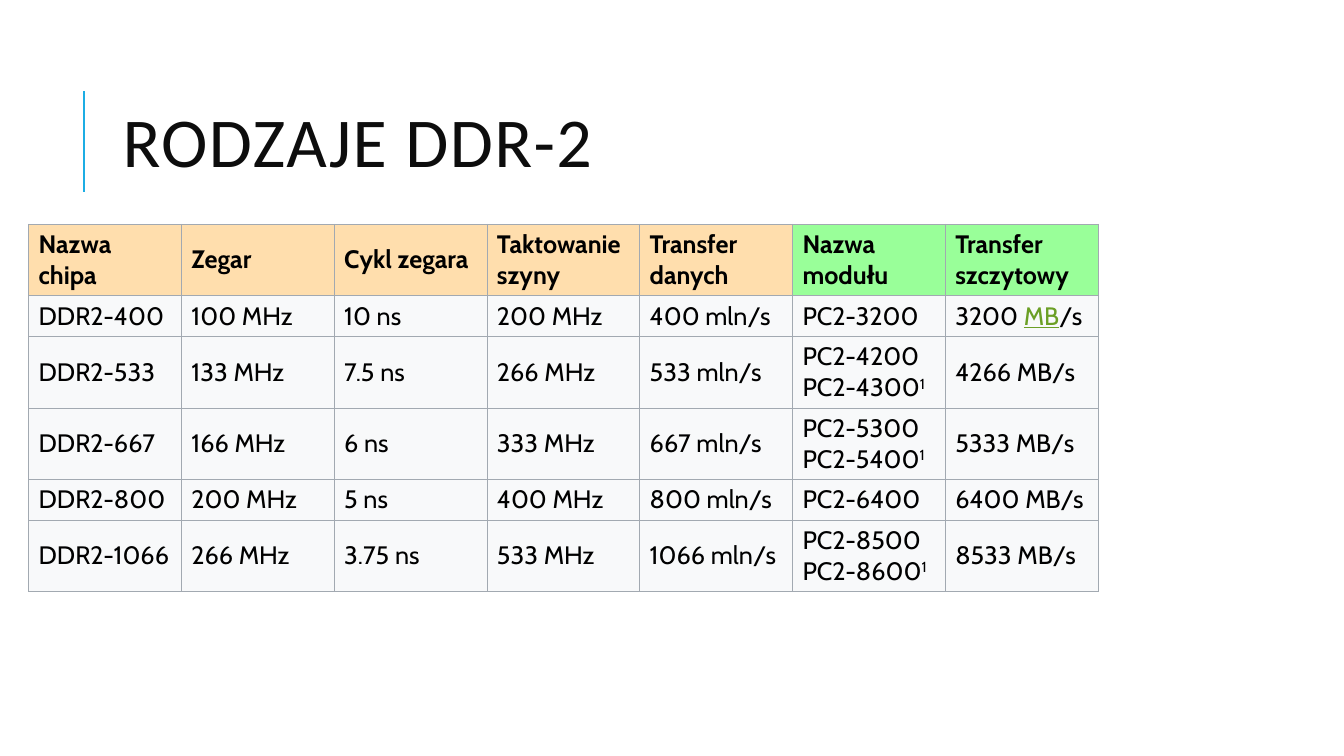
from lxml import etree
from pptx import Presentation
from pptx.dml.color import RGBColor
from pptx.enum.shapes import MSO_CONNECTOR
from pptx.enum.text import MSO_ANCHOR
from pptx.oxml import parse_xml
from pptx.oxml.ns import nsdecls, qn
from pptx.util import Cm, Pt

MIDDLE = MSO_ANCHOR.MIDDLE
STRAIGHT = MSO_CONNECTOR.STRAIGHT

ACCENT = RGBColor(0x1C, 0xAD, 0xE4)
TITLE = RGBColor(0x0D, 0x0D, 0x0D)
BLACK = RGBColor(0x00, 0x00, 0x00)
LINK = RGBColor(0x6B, 0x9F, 0x25)
CHIP_HEADER = RGBColor(0xFF, 0xDE, 0xAD)
MODULE_HEADER = RGBColor(0x99, 0xFF, 0x99)
BODY = RGBColor(0xF8, 0xF9, 0xFA)
BORDER = RGBColor(0xA2, 0xA9, 0xB1)

FOOTNOTE = "1"
UNIT = "MB"
MODULE_COLUMN = 5
COLUMN_WIDTH = Cm(3.85)
ONE_LINE, TWO_LINES = Cm(1.03), Cm(1.8)

# A cell given as a tuple holds several runs.
ROWS = [
    ["Nazwa chipa", "Zegar", "Cykl zegara", "Taktowanie szyny",
     "Transfer danych", "Nazwa modułu", "Transfer szczytowy"],
    ["DDR2-400", "100 MHz", "10 ns", "200 MHz", "400 mln/s",
     "PC2-3200", ("3200 ", UNIT, "/s")],
    ["DDR2-533", "133 MHz", "7.5 ns", "266 MHz", "533 mln/s",
     ("PC2-4200\nPC2-4300", FOOTNOTE), "4266 MB/s"],
    ["DDR2-667", "166 MHz", "6 ns", "333 MHz", "667 mln/s",
     ("PC2-5300\nPC2-5400", FOOTNOTE), "5333 MB/s"],
    ["DDR2-800", "200 MHz", "5 ns", "400 MHz", "800 mln/s",
     "PC2-6400", "6400 MB/s"],
    ["DDR2-1066", "266 MHz", "3.75 ns", "533 MHz", "1066 mln/s",
     ("PC2-8500\nPC2-8600", FOOTNOTE), "8533 MB/s"],
]
ROW_HEIGHTS = [TWO_LINES, ONE_LINE, TWO_LINES, TWO_LINES, ONE_LINE, TWO_LINES]


def style_cell(cell, fill):
    """Fill the cell and border it; borders must precede the fill in the XML."""
    cell.vertical_anchor = MIDDLE
    cell.fill.solid()
    cell.fill.fore_color.rgb = fill
    properties = cell._tc.get_or_add_tcPr()
    for position, side in enumerate(("lnL", "lnR", "lnT", "lnB")):
        properties.insert(position, parse_xml(
            f'<a:{side} {nsdecls("a")} w="{Pt(0.6)}"><a:solidFill>'
            f'<a:srgbClr val="{BORDER}"/></a:solidFill></a:{side}>'))


deck = Presentation()
deck.slide_width, deck.slide_height = Cm(33.87), Cm(19.05)
page = deck.slides.add_slide(deck.slide_layouts[6])

title_bar = page.shapes.add_connector(
    STRAIGHT, Cm(2.12), Cm(4.83), Cm(2.12), Cm(2.3))
title_bar.line.color.rgb = ACCENT
title_bar.line.width = Pt(1.5)
etree.SubElement(title_bar._element.spPr, qn("a:effectLst"))

title_box = page.shapes.add_textbox(Cm(2.84), Cm(1.63), Cm(27), Cm(4.17))
title_box.text_frame.word_wrap = True
title_box.text_frame.vertical_anchor = MIDDLE
title_para = title_box.text_frame.paragraphs[0]
title_para.text = "RODZAJE DDR-2"
title_para.line_spacing = 0.8
title_span = title_para.runs[0]
title_span.font.name = "Calibri"
title_span.font.size = Pt(50)
title_span.font.color.rgb = TITLE
title_span.font._element.set("spc", "100")

table = page.shapes.add_table(
    len(ROWS), len(ROWS[0]), Cm(0.72), Cm(5.65),
    COLUMN_WIDTH * len(ROWS[0]), sum(ROW_HEIGHTS)).table
table.horz_banding = False
for column in table.columns:
    column.width = COLUMN_WIDTH

for row_index, (texts, height) in enumerate(zip(ROWS, ROW_HEIGHTS)):
    table.rows[row_index].height = height
    is_header = row_index == 0
    for column_index, content in enumerate(texts):
        cell = table.cell(row_index, column_index)
        if not is_header:
            fill = BODY
        elif column_index < MODULE_COLUMN:
            fill = CHIP_HEADER
        else:
            fill = MODULE_HEADER
        style_cell(cell, fill)

        first, *others = content if isinstance(content, tuple) else (content,)
        para = cell.text_frame.paragraphs[0]
        para.text = first
        for text in others:
            para.add_run().text = text
        for span in para.runs:
            span.font.name = "Cabin"
            span.font.size = Pt(18)
            span.font.bold = is_header
            span.font.color.rgb = BLACK
            if span.text == FOOTNOTE:
                span.font._element.set("baseline", "30000")
            elif span.text == UNIT:
                span.font.color.rgb = LINK
                span.font.underline = True

deck.save("out.pptx")
